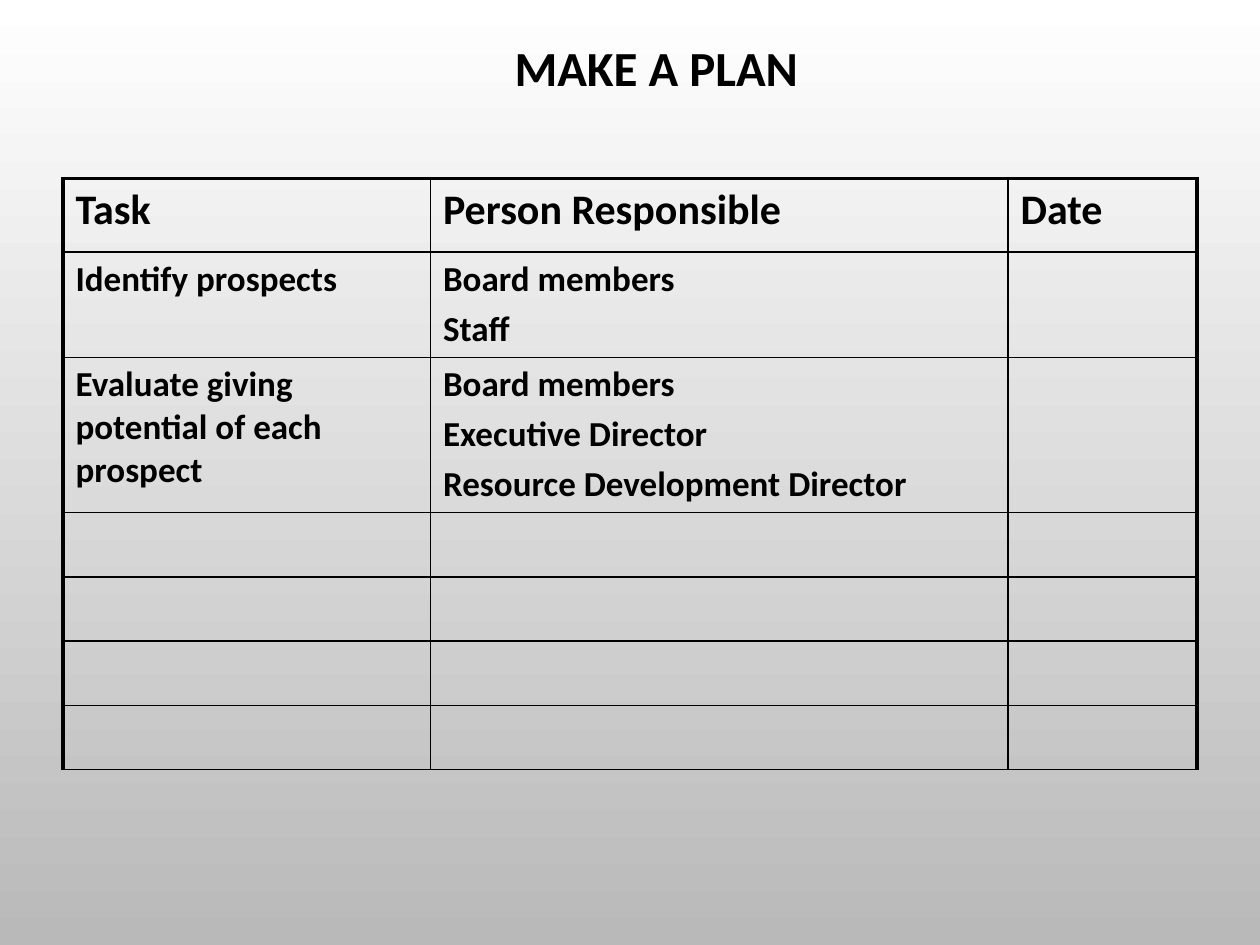
import pptx
import pptx.dml.color
import pptx.enum.text
import pptx.oxml
import pptx.oxml.ns
import pptx.util

Pt = pptx.util.Pt

COLORS = {"text": "000000", "border": "000000", "top": "FFFFFF", "bottom": "B9B9B9"}
FONT = "Calibri"
OUTER_BORDER, INNER_BORDER = 2.25, 1
HEADER_SIZE, BODY_SIZE = 24, 20

COLUMN_WIDTHS = [210, 330, 108]
ROW_HEIGHTS = [42, 60, 88.5] + [36.75] * 4
PLAN = [
    ["Task", "Person Responsible", "Date"],
    ["Identify prospects", "Board members\nStaff", ""],
    ["Evaluate giving potential of each prospect",
     "Board members\nExecutive Director\nResource Development Director", ""],
] + [["", "", ""]] * 4


def rgb(name):
    return pptx.dml.color.RGBColor.from_string(COLORS[name])


def set_background(slide):
    fill = slide.background.fill
    fill.gradient()
    fill.gradient_angle = 270
    for stop, position, name in zip(fill.gradient_stops, (0, 1), ("top", "bottom")):
        stop.position = position
        stop.color.rgb = rgb(name)


def format_text(text_frame, size):
    for paragraph in text_frame.paragraphs:
        font = paragraph.font
        font.name, font.size, font.bold = FONT, Pt(size), True
        font.color.rgb = rgb("text")
        for run in paragraph.runs:
            run.font.name, run.font.size, run.font.bold = FONT, Pt(size), True
            run.font.color.rgb = rgb("text")


def add_title(slide, text):
    title = slide.shapes.title
    title.left, title.top, title.width, title.height = Pt(156), Pt(12), Pt(438), Pt(57)
    text_frame = title.text_frame
    text_frame.text = text
    text_frame.vertical_anchor = pptx.enum.text.MSO_ANCHOR.MIDDLE
    paragraph = text_frame.paragraphs[0]
    paragraph.alignment = pptx.enum.text.PP_ALIGN.CENTER
    paragraph.line_spacing = 0.9
    format_text(text_frame, 28)


def set_borders(cell, widths):
    """Draw cell borders; widths maps L, R, T and B to points, in that order."""
    properties = cell._tc.get_or_add_tcPr()
    for side, width in widths.items():
        properties.append(pptx.oxml.parse_xml(
            f'<a:ln{side} {pptx.oxml.ns.nsdecls("a")} w="{Pt(width)}"><a:solidFill>'
            f'<a:srgbClr val="{COLORS["border"]}"/></a:solidFill></a:ln{side}>'))


def fill_cell(cell, text, size):
    text_frame = cell.text_frame
    text_frame.text = text
    for paragraph in text_frame.paragraphs[1:]:
        paragraph.space_before = Pt(0.2 * size)
    format_text(text_frame, size)


def add_plan_table(slide):
    frame = slide.shapes.add_table(
        len(PLAN), len(COLUMN_WIDTHS), Pt(36), Pt(102),
        Pt(sum(COLUMN_WIDTHS)), Pt(sum(ROW_HEIGHTS)))
    table = frame.table
    table.first_row = table.horz_banding = False
    for column, width in zip(table.columns, COLUMN_WIDTHS):
        column.width = Pt(width)
    for row, height in zip(table.rows, ROW_HEIGHTS):
        row.height = Pt(height)

    last_column = len(COLUMN_WIDTHS) - 1
    for row_index, texts in enumerate(PLAN):
        for column_index, text in enumerate(texts):
            cell = table.cell(row_index, column_index)
            fill_cell(cell, text, BODY_SIZE if row_index else HEADER_SIZE)
            set_borders(cell, {
                "L": INNER_BORDER if column_index else OUTER_BORDER,
                "R": OUTER_BORDER if column_index == last_column else INNER_BORDER,
                "T": INNER_BORDER if row_index else OUTER_BORDER,
                "B": INNER_BORDER,
            })
            cell.fill.background()


def main():
    presentation = pptx.Presentation()
    presentation.slide_width, presentation.slide_height = Pt(720), Pt(540)
    slide = presentation.slides.add_slide(presentation.slide_layouts.get_by_name("Title Only"))
    set_background(slide)
    add_title(slide, "MAKE A PLAN")
    add_plan_table(slide)
    presentation.save("out.pptx")


if __name__ == "__main__":
    main()
